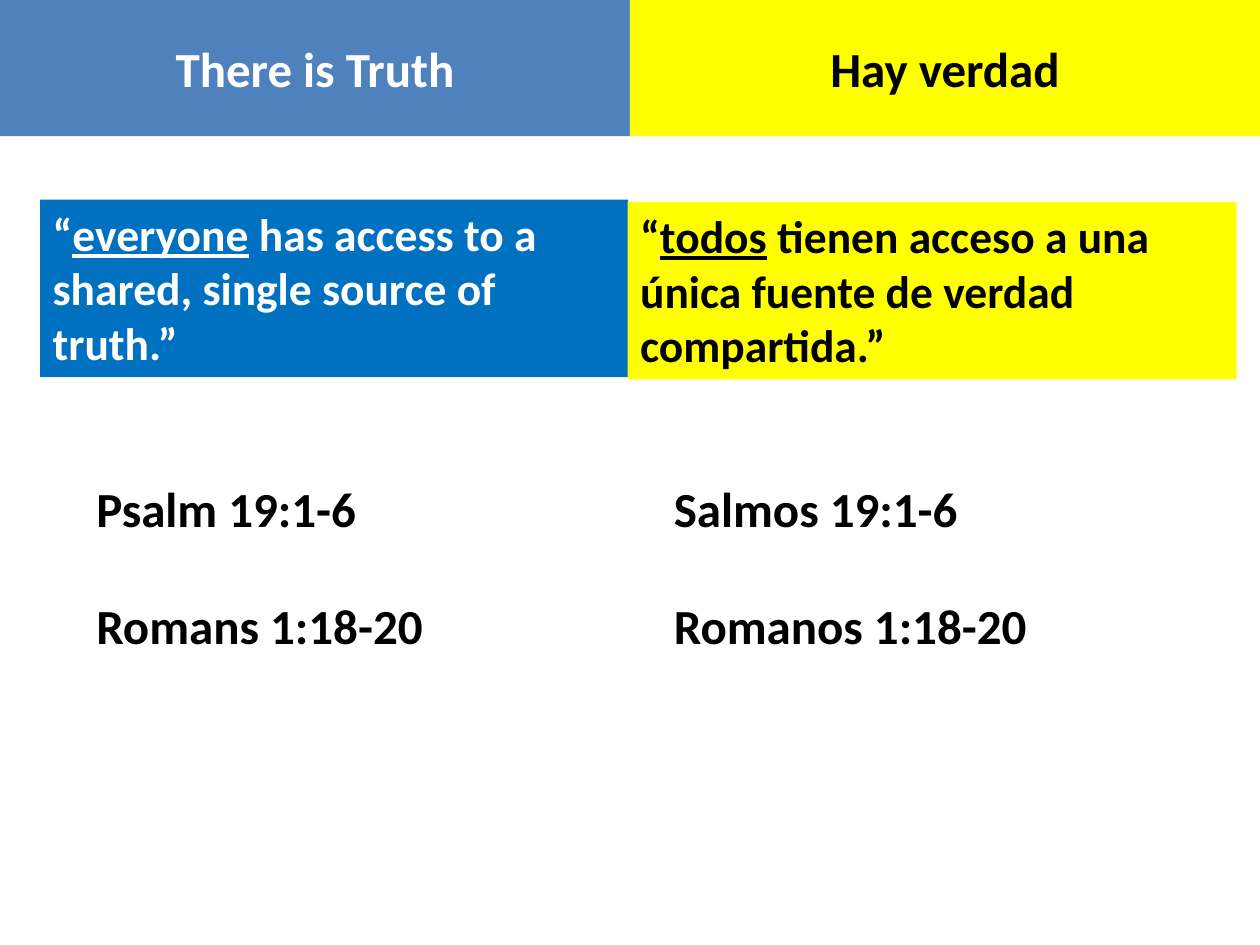
from pptx import Presentation
from pptx.dml.color import RGBColor
from pptx.enum import shapes, text
from pptx.util import Pt

FONT = "Calibri"
WHITE, BLACK, YELLOW = "FFFFFF", "000000", "FFFF00"
SLIDE_W, SLIDE_H = 720, 540
HEADER_H = 77.8
VERSE_X, VERSE_W, VERSE_H = 48, 282, 41
VERSE_TOP, VERSE_STEP = 270, 67


def rgb(value):
    return RGBColor.from_string(value)


def fill_shape(sp, color):
    sp.fill.solid()
    sp.fill.fore_color.rgb = rgb(color)
    sp.line.fill.background()


def add_block(slide, box, color):
    """Add a plain rectangle without outline or shadow."""
    sp = slide.shapes.add_shape(shapes.MSO_SHAPE.RECTANGLE, *map(Pt, box))
    sp.shadow.inherit = False
    fill_shape(sp, color)
    return sp


def format_runs(p, size, color, align=text.PP_ALIGN.LEFT):
    p.alignment = align
    for r in p.runs:
        r.font.name = FONT
        r.font.size = Pt(size)
        r.font.bold = True
        r.font.color.rgb = rgb(color)


def write_header(sp, words, color):
    tf = sp.text_frame
    tf.text = words
    tf.word_wrap = True
    tf.auto_size = text.MSO_AUTO_SIZE.NONE
    tf.vertical_anchor = text.MSO_ANCHOR.MIDDLE
    format_runs(tf.paragraphs[0], 28, color, text.PP_ALIGN.CENTER)


def add_headers(slide, box, english, spanish):
    """Split the box in two halves: the slide title and its translation."""
    x, y, w, h = box
    half = w / 2
    title = slide.shapes.title
    title.left, title.top, title.width, title.height = map(Pt, (x, y, half, h))
    fill_shape(title, "4F81BD")
    write_header(title, english, WHITE)
    translation = add_block(slide, (x + half, y, half, h), YELLOW)
    write_header(translation, spanish, BLACK)


def add_quote(slide, box, fill, color, stressed, rest):
    """Add a quotation whose first word is underlined."""
    tf = add_block(slide, box, fill).text_frame
    tf.word_wrap = True
    tf.auto_size = text.MSO_AUTO_SIZE.SHAPE_TO_FIT_TEXT
    tf.vertical_anchor = text.MSO_ANCHOR.TOP
    p = tf.paragraphs[0]
    for words in ("“", stressed, rest):
        p.add_run().text = words
    p.runs[1].font.underline = True
    format_runs(p, 26, color)


def add_verses(slide, box, verses):
    """Stack Bible references downwards from the top of the box."""
    x, y, w, h = box
    for i, verse in enumerate(verses):
        place = (x, y + i * VERSE_STEP, w, h)
        tf = slide.shapes.add_textbox(*map(Pt, place)).text_frame
        tf.text = verse
        tf.word_wrap = True
        tf.auto_size = text.MSO_AUTO_SIZE.SHAPE_TO_FIT_TEXT
        format_runs(tf.paragraphs[0], 28, BLACK)


def main():
    prs = Presentation()
    prs.slide_width, prs.slide_height = Pt(SLIDE_W), Pt(SLIDE_H)
    slide = prs.slides.add_slide(prs.slide_layouts[5])

    add_headers(slide, (0, 0, SLIDE_W, HEADER_H), "There is Truth", "Hay verdad")
    add_quote(slide, (23, 114, 336, 101.5), "0070C0", WHITE,
              "everyone", " has access to a shared, single source of truth.”")
    add_quote(slide, (358.7, 115.3, 348, 101.5), YELLOW, BLACK,
              "todos", " tienen acceso a una única fuente de verdad compartida.”")
    add_verses(slide, (VERSE_X, VERSE_TOP, VERSE_W, VERSE_H),
               ("Psalm 19:1-6", "Romans 1:18-20"))
    add_verses(slide, (378, VERSE_TOP, VERSE_W, VERSE_H),
               ("Salmos 19:1-6", "Romanos 1:18-20"))
    prs.save("out.pptx")


if __name__ == "__main__":
    main()
